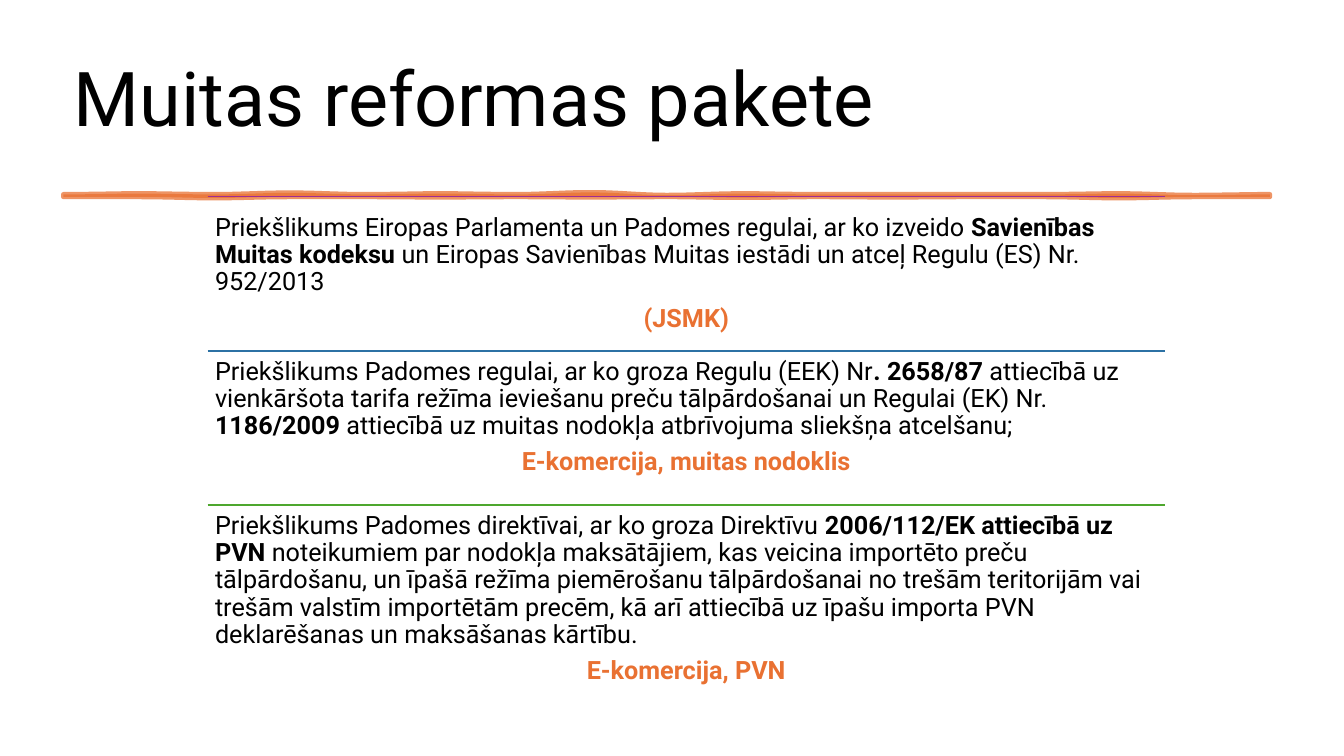
from math import cos, pi

from lxml.etree import SubElement
from pptx import Presentation
from pptx.dml.color import RGBColor
from pptx.enum.shapes import MSO_CONNECTOR as Connector
from pptx.enum.text import MSO_ANCHOR as Anchor, MSO_AUTO_SIZE as AutoSize, PP_ALIGN as Align
from pptx.oxml.ns import qn
from pptx.util import Cm, Pt

FONT = "Roboto"
BLACK, ORANGE = "000000", "E97132"
LEFT, TOP, WIDTH, ROW = 5.23, 4.95, 24.13, 3.89
RIBBON_LEFT, RIBBON_TOP, RIBBON_BOTTOM, RIBBON_STEP = 1.6, 4.9, 4.96, 1.9
UPPER_WAVE = [0, -0.02, 0, -0.04, 0, -0.02, 0, -0.05, 0.02, -0.02, 0, 0, 0, 0, -0.02, 0.02, 0]
LOWER_WAVE = [0, 0, 0.03, 0, 0, 0.01, 0, 0.01, 0, 0.02, 0, 0.01, 0, 0, 0.03, 0, 0]

PROPOSALS = [
    ("A02B93", ROW, Anchor.MIDDLE, [
        ("Priekšlikums Eiropas Parlamenta un Padomes regulai, ar ko izveido ", False),
        ("Savienības Muitas kodeksu ", True),
        ("un Eiropas Savienības Muitas iestādi un atceļ Regulu (ES) Nr. 952/2013", False),
    ], "(JSMK)"),
    ("2C71A4", ROW, Anchor.TOP, [
        ("Priekšlikums Padomes regulai, ar ko groza Regulu (EEK) Nr", False),
        (". 2658/87 ", True),
        ("attiecībā uz vienkāršota tarifa režīma ieviešanu preču tālpārdošanai "
         "un Regulai (EK) Nr. ", False),
        ("1186/2009", True),
        (" attiecībā uz muitas nodokļa atbrīvojuma sliekšņa atcelšanu;", False),
    ], "E-komercija, muitas nodoklis"),
    ("4EA72E", 4.93, Anchor.TOP, [
        ("Priekšlikums Padomes direktīvai, ar ko groza Direktīvu ", False),
        ("2006/112/EK attiecībā uz PVN ", True),
        ("noteikumiem par nodokļa maksātājiem, kas veicina importēto preču tālpārdošanu, "
         "un īpašā režīma piemērošanu tālpārdošanai no trešām teritorijām vai trešām valstīm "
         "importētām precēm, kā arī attiecībā uz īpašu importa PVN deklarēšanas un "
         "maksāšanas kārtību.", False),
    ], "E-komercija, PVN"),
]


def colour(hex_code):
    """Turn a hex string into a colour."""
    return RGBColor.from_string(hex_code)


def apply(target, formats):
    """Set each attribute in a dict of format values."""
    for name, value in formats.items():
        setattr(target, name, value)


def add_run(paragraph, wording, size, hex_code=BLACK, bold=False):
    """Add one formatted run to a paragraph."""
    run = paragraph.add_run()
    run.text = wording
    apply(run.font, {"name": FONT, "size": Pt(size), "bold": bold})
    run.font.color.rgb = colour(hex_code)


def add_title(slide, wording):
    """Place and format the title placeholder."""
    title = slide.shapes.title
    apply(title, {"left": Cm(1.6), "top": Cm(0.66), "width": Cm(30.68), "height": Cm(3.07)})
    apply(title.text_frame, {"auto_size": AutoSize.NONE, "word_wrap": True,
                             "vertical_anchor": Anchor.BOTTOM})
    heading = title.text_frame.paragraphs[0]
    apply(heading, {"alignment": Align.LEFT, "line_spacing": 0.9})
    add_run(heading, wording, 54)


def wavy_edge(base, wave, steps=8):
    """Return points that ease smoothly from one wave height to the next."""
    points = []
    for index in range((len(wave) - 1) * steps + 1):
        knot, part = divmod(index, steps)
        following = wave[min(knot + 1, len(wave) - 1)]
        ease = (1 - cos(pi * part / steps)) / 2
        height = wave[knot] + (following - wave[knot]) * ease
        points.append((Cm(RIBBON_LEFT + index / steps * RIBBON_STEP), Cm(base + height)))
    return points


def add_ribbon(slide):
    """Draw the translucent hand-drawn rule below the title."""
    outline = wavy_edge(RIBBON_TOP, UPPER_WAVE) + wavy_edge(RIBBON_BOTTOM, LOWER_WAVE)[::-1]
    builder = slide.shapes.build_freeform(*outline[0])
    builder.add_line_segments(outline[1:], close=True)
    ribbon = builder.convert_to_shape()
    ribbon.shadow.inherit = False
    ribbon.fill.solid()
    ribbon.fill.fore_color.rgb = colour(ORANGE)
    ribbon.line.color.rgb = colour(ORANGE)
    ribbon.line.width = Pt(3.5)
    for tint in ribbon.element.spPr.iter(qn("a:srgbClr")):
        SubElement(tint, qn("a:alpha"), val="75000")


def add_rule(slide, top, hex_code):
    """Draw a thin rule above a proposal."""
    rule = slide.shapes.add_connector(
        Connector.STRAIGHT, Cm(LEFT), Cm(top), Cm(LEFT + WIDTH), Cm(top))
    rule.line.color.rgb = colour(hex_code)
    rule.line.width = Pt(1)
    SubElement(rule.element.spPr, qn("a:effectLst"))


def add_proposal(slide, top, height, anchor, wording, label):
    """Write a proposal with its centred label."""
    frame = slide.shapes.add_textbox(Cm(LEFT), Cm(top), Cm(WIDTH), Cm(height)).text_frame
    margins = dict.fromkeys(
        ["margin_left", "margin_top", "margin_right", "margin_bottom"], Cm(0.19))
    apply(frame, {"word_wrap": True, "vertical_anchor": anchor, **margins})
    spacing = {"line_spacing": 0.9, "space_after": Pt(6.3)}
    description, caption = frame.paragraphs[0], frame.add_paragraph()
    apply(description, {"alignment": Align.LEFT, **spacing})
    apply(caption, {"alignment": Align.CENTER, **spacing})
    for part, bold in wording:
        add_run(description, part, 18, bold=bold)
    add_run(caption, label, 18, ORANGE, True)


def main():
    """Build the slide and save it."""
    deck = Presentation()
    apply(deck, {"slide_width": Cm(33.87), "slide_height": Cm(19.05)})
    slide = deck.slides.add_slide(deck.slide_layouts[5])
    add_title(slide, "Muitas reformas pakete")
    add_ribbon(slide)
    for index, (rule_colour, height, anchor, wording, label) in enumerate(PROPOSALS):
        top = TOP + index * ROW
        add_rule(slide, top, rule_colour)
        add_proposal(slide, top, height, anchor, wording, label)
    deck.save("out.pptx")


if __name__ == "__main__":
    main()
